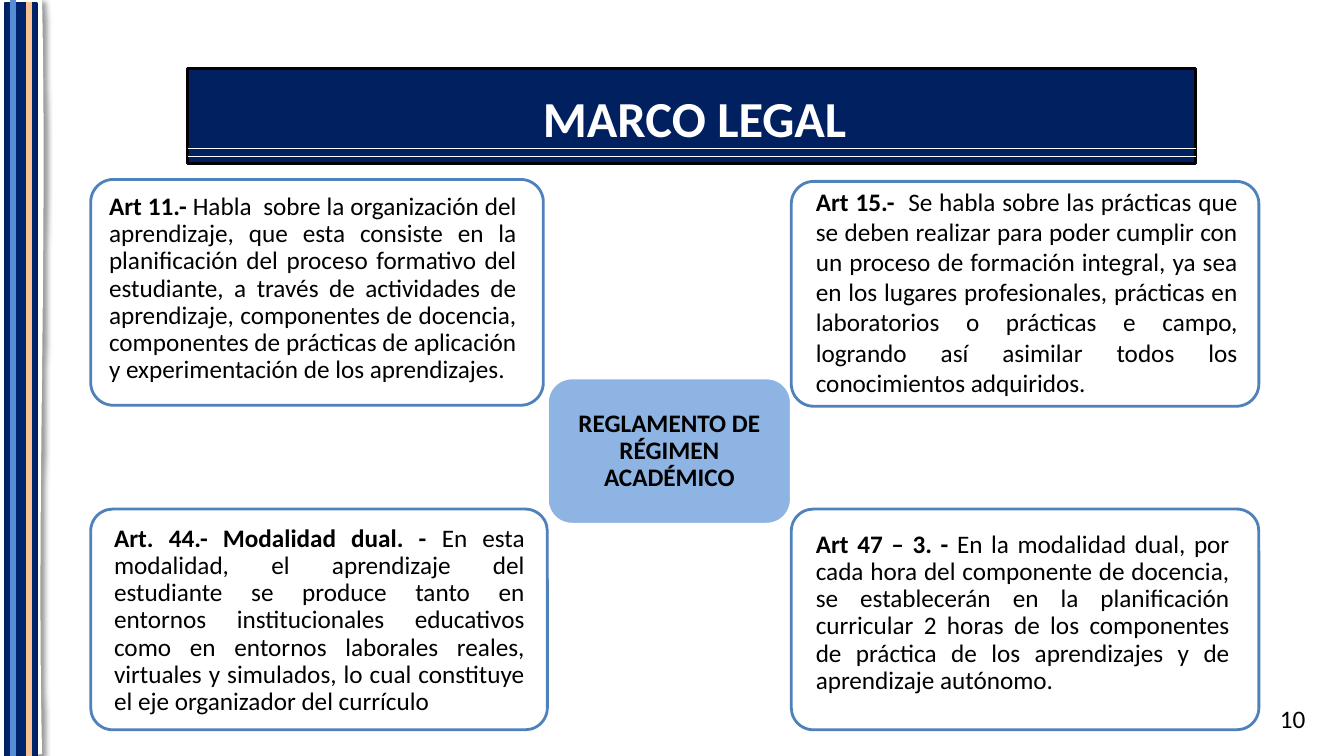
from lxml import etree
from pptx import Presentation
from pptx.dml.color import RGBColor
from pptx.enum.shapes import MSO_CONNECTOR, MSO_SHAPE
from pptx.enum.text import MSO_ANCHOR, PP_ALIGN
from pptx.oxml import parse_xml
from pptx.util import Pt

RECT, ROUNDED, WAVE = MSO_SHAPE.RECTANGLE, MSO_SHAPE.ROUNDED_RECTANGLE, MSO_SHAPE.WAVE
STRAIGHT = MSO_CONNECTOR.STRAIGHT
TOP, MIDDLE = MSO_ANCHOR.TOP, MSO_ANCHOR.MIDDLE
LEFT, CENTER, JUSTIFY = PP_ALIGN.LEFT, PP_ALIGN.CENTER, PP_ALIGN.JUSTIFY
A = "http://schemas.openxmlformats.org/drawingml/2006/main"

deck = Presentation()
deck.slide_width, deck.slide_height = Pt(960), Pt(540)
slide = deck.slides.add_slide(deck.slide_layouts[6])
shapes = slide.shapes


def add_panel(kind, box, fill, line):
    panel = shapes.add_shape(kind, *map(Pt, box))
    panel.shadow.inherit = False
    panel.fill.solid()
    panel.fill.fore_color.rgb = RGBColor.from_string(fill)
    panel.line.color.rgb = RGBColor.from_string(line)
    panel.line.width = Pt(2)
    return panel


def add_text(text, box, lead="", size=18, color="000000", bold=False,
             align=LEFT, anchor=TOP, inset=(7.2, 3.6), spacing=1.0):
    holder = shapes.add_textbox(*map(Pt, box))
    frame = holder.text_frame
    frame.word_wrap = True
    frame.vertical_anchor = anchor
    frame.margin_left = frame.margin_right = Pt(inset[0])
    frame.margin_top = frame.margin_bottom = Pt(inset[1])
    paragraph = frame.paragraphs[0]
    paragraph.alignment = align
    paragraph.line_spacing = spacing
    for words, strong in ((lead, True), (text, bold)):
        if words:
            run = paragraph.add_run()
            run.text = words
            run.font.name = "Calibri"
            run.font.size = Pt(size)
            run.font.bold = strong
            run.font.color.rgb = RGBColor.from_string(color)


side_edge = add_panel(WAVE, (-243.4, 264.2, 537.8, 9.4), "FFFFFF", "FFFFFF")
side_edge.rotation = 90
effects = side_edge._element.spPr.find(f"{{{A}}}effectLst")
effects.append(parse_xml(
    f'<a:outerShdw xmlns:a="{A}" blurRad="50800" dist="38100" dir="2700000" '
    'algn="tl" rotWithShape="0"><a:srgbClr val="000000">'
    '<a:alpha val="40000"/></a:srgbClr></a:outerShdw>'))
add_panel(RECT, (3.6, 2.2, 22.3, 537.8), "00246C", "002060")

add_panel(RECT, (134, 49, 720, 67.7), "002060", "000000")
add_text("MARCO LEGAL", (210, 59, 572.4, 51), size=36, color="FFFFFF",
         bold=True, align=CENTER)

stripes = [
    (134, 111.6, 854, 111.6, "FFFFFF", 0.75),
    (134, 105.8, 854, 105.8, "FFFFFF", 0.75),
    (9.4, 0, 9.4, 540, "558ED5", 4.5),
    (20.9, 1.4, 20.9, 541.4, "FAC090", 4.5),
]
for x1, y1, x2, y2, color, width in stripes:
    stripe = shapes.add_connector(STRAIGHT, Pt(x1), Pt(y1), Pt(x2), Pt(y2))
    stripe.line.color.rgb = RGBColor.from_string(color)
    stripe.line.width = Pt(width)
    etree.SubElement(stripe._element.spPr, f"{{{A}}}effectLst")

articles = [
    ((565.2, 363.6, 334, 157.7), (578.2, 375.1, 304.6, 146.9), 0.9,
     "Art 47 – 3. - ",
     "En la modalidad dual, por cada hora del componente de docencia, se "
     "establecerán en la planificación curricular 2 horas de los componentes "
     "de práctica de los aprendizajes y de aprendizaje autónomo."),
    ((64.8, 363.6, 326.2, 157.7), (77, 370.8, 302.4, 134.6), 0.9,
     "Art. 44.- Modalidad dual. -",
     " En esta modalidad, el aprendizaje del estudiante se produce tanto en "
     "entornos institucionales educativos como en entornos laborales reales, "
     "virtuales y simulados, lo cual constituye el eje organizador del currículo"),
    ((64.8, 128.2, 323.3, 161.3), (73.4, 133.9, 300.2, 133.9), 0.9,
     "Art 11.- ",
     "Habla  sobre la organización del aprendizaje, que esta consiste en la "
     "planificación del proceso formativo del estudiante, a través de "
     "actividades de aprendizaje, componentes de docencia, componentes de "
     "prácticas de aplicación y experimentación de los aprendizajes."),
    ((565.2, 129.6, 334, 160.6), (578.2, 128.2, 310.3, 157.7), 1.0,
     "Art 15.-  ",
     "Se habla sobre las prácticas que se deben realizar para poder cumplir "
     "con un proceso de formación integral, ya sea en los lugares "
     "profesionales, prácticas en laboratorios o prácticas e campo, logrando "
     "así asimilar todos los conocimientos adquiridos."),
]
for frame_box, text_box, spacing, heading, body in articles:
    article = add_panel(ROUNDED, frame_box, "FFFFFF", "4F81BD")
    article.adjustments[0] = 0.1
    add_text(body, text_box, lead=heading, align=JUSTIFY, inset=(4.5, 4.5),
             spacing=spacing)

regulation_box = (391, 270, 174.2, 104.4)
add_panel(ROUNDED, regulation_box, "8EB4E3", "FFFFFF")
add_text("REGLAMENTO DE RÉGIMEN ACADÉMICO", regulation_box, bold=True,
         align=CENTER, anchor=MIDDLE, inset=(10, 10), spacing=0.9)

add_text("10", (907.2, 499, 52.6, 28.8))

deck.save("out.pptx")
